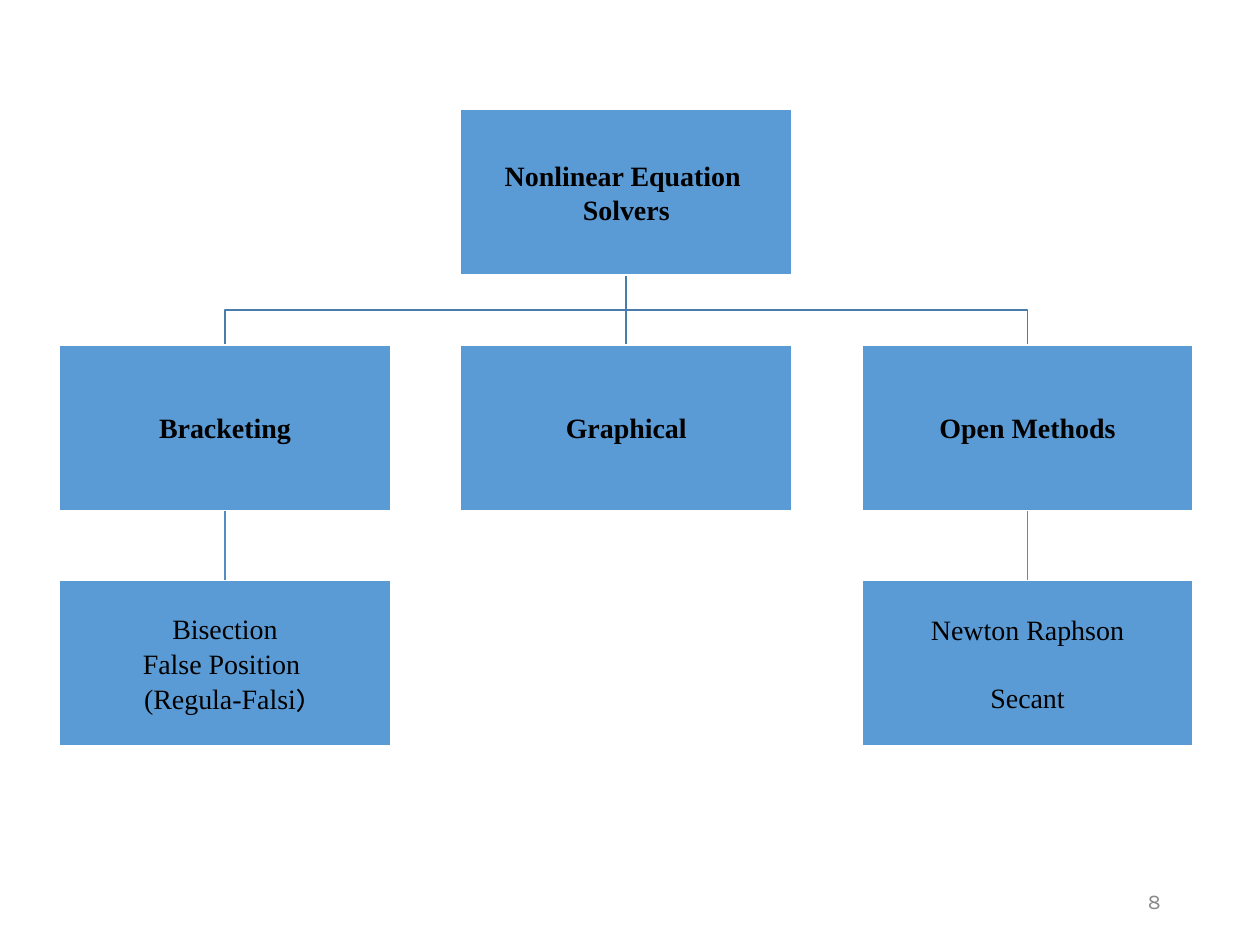
"""Build a slide with a tree of nonlinear equation solvers."""
from lxml import etree
from pptx import Presentation
from pptx.dml.color import RGBColor
from pptx.enum.shapes import MSO_CONNECTOR, MSO_SHAPE
from pptx.enum.text import MSO_ANCHOR, PP_ALIGN
from pptx.oxml.ns import qn
from pptx.util import Pt

RECTANGLE = MSO_SHAPE.RECTANGLE
STRAIGHT = MSO_CONNECTOR.STRAIGHT
MIDDLE = MSO_ANCHOR.MIDDLE
CENTER, RIGHT = PP_ALIGN.CENTER, PP_ALIGN.RIGHT

BLUE = RGBColor(0x5B, 0x9B, 0xD5)
UPPER_LINE = RGBColor(0x49, 0x7C, 0xAB)
LOWER_LINE = RGBColor(0x53, 0x8D, 0xC1)
WHITE = RGBColor(0xFF, 0xFF, 0xFF)
BLACK = RGBColor(0, 0, 0)
GRAY = RGBColor(0x89, 0x89, 0x89)

SERIF, SANS = "Times New Roman", "Karla"
HEADING = {"name": SERIF, "size": Pt(16), "bold": True}
METHOD = {"name": SERIF, "size": Pt(16), "bold": False}
CLOSING = {"name": SANS, "size": Pt(16), "bold": False}
NUMBER = {"name": SANS, "size": Pt(12), "bold": False}

TIGHT, LOOSE = 0.75, 20
ROOT = (1, 0)
NODES = [
    (ROOT, TIGHT, [[("Nonlinear Equation ", HEADING)], [("Solvers", HEADING)]]),
    ((0, 1), TIGHT, [[("Bracketing", HEADING)]]),
    ((0, 2), TIGHT, [
        [("Bisection", METHOD)],
        [("False Position ", METHOD)],
        [("(Regula-Falsi", METHOD), (")", CLOSING)],
    ]),
    ((1, 1), TIGHT, [[("Graphical", HEADING)]]),
    ((2, 1), TIGHT, [[("Open Methods", HEADING)]]),
    ((2, 2), LOOSE, [[("Newton Raphson", METHOD)], [("Secant", METHOD)]]),
]
LINKS = [
    ((2, 1), (2, 2), LOWER_LINE),
    (ROOT, (2, 1), UPPER_LINE),
    (ROOT, (1, 1), UPPER_LINE),
    ((0, 1), (0, 2), LOWER_LINE),
    (ROOT, (0, 1), UPPER_LINE),
]

LEFT, TOP = 33.9, 62.5
WIDTH, HEIGHT = 189.4, 94.7
COLUMN_STEP, ROW_STEP = 229.3, 134.6
INSET = 0.7


def corner(cell):
    column, row = cell
    return LEFT + column * COLUMN_STEP, TOP + row * ROW_STEP


def write(frame, paragraphs, color, align, gap=0):
    frame.word_wrap = True
    frame.vertical_anchor = MIDDLE
    for index, spans in enumerate(paragraphs):
        para = frame.add_paragraph() if index else frame.paragraphs[0]
        para.alignment = align
        para.space_before = Pt(gap if index else 0)
        for text, style in spans:
            span = para.add_run()
            span.text = text
            span.font.color.rgb = color
            for key, value in style.items():
                setattr(span.font, key, value)


def add_link(page, parent, child, color):
    parent_left, parent_top = corner(parent)
    child_left, end_y = corner(child)
    start_x, end_x = parent_left + WIDTH / 2, child_left + WIDTH / 2
    start_y = parent_top + HEIGHT
    if parent[0] == child[0]:
        link = page.shapes.add_connector(
            STRAIGHT, Pt(start_x), Pt(start_y), Pt(end_x), Pt(end_y))
        etree.SubElement(link._element.spPr, qn("a:effectLst"))
    else:
        bend_y = (start_y + end_y) / 2
        builder = page.shapes.build_freeform(Pt(start_x), Pt(start_y))
        corners = [(start_x, bend_y), (end_x, bend_y), (end_x, end_y)]
        builder.add_line_segments([(Pt(x), Pt(y)) for x, y in corners], close=False)
        link = builder.convert_to_shape()
        link.fill.background()
        link.shadow.inherit = False
    link.line.color.rgb = color
    link.line.width = Pt(1)


def add_node(page, cell, gap, paragraphs):
    left, top = corner(cell)
    box = page.shapes.add_shape(RECTANGLE, Pt(left), Pt(top), Pt(WIDTH), Pt(HEIGHT))
    box.shadow.inherit = False
    box.fill.solid()
    box.fill.fore_color.rgb = BLUE
    box.line.color.rgb = WHITE
    box.line.width = Pt(1)
    for side in ("left", "top", "right", "bottom"):
        setattr(box.text_frame, f"margin_{side}", Pt(INSET))
    write(box.text_frame, paragraphs, BLACK, CENTER, gap)


def main():
    deck = Presentation()
    deck.slide_width, deck.slide_height = Pt(720), Pt(540)
    page = deck.slides.add_slide(deck.slide_layouts[6])
    for parent, child, color in LINKS:
        add_link(page, parent, child, color)
    for cell, gap, paragraphs in NODES:
        add_node(page, cell, gap, paragraphs)
    number = page.shapes.add_textbox(Pt(508.3), Pt(500.4), Pt(162), Pt(28.8))
    write(number.text_frame, [[("8", NUMBER)]], GRAY, RIGHT)
    deck.save("out.pptx")


if __name__ == "__main__":
    main()
